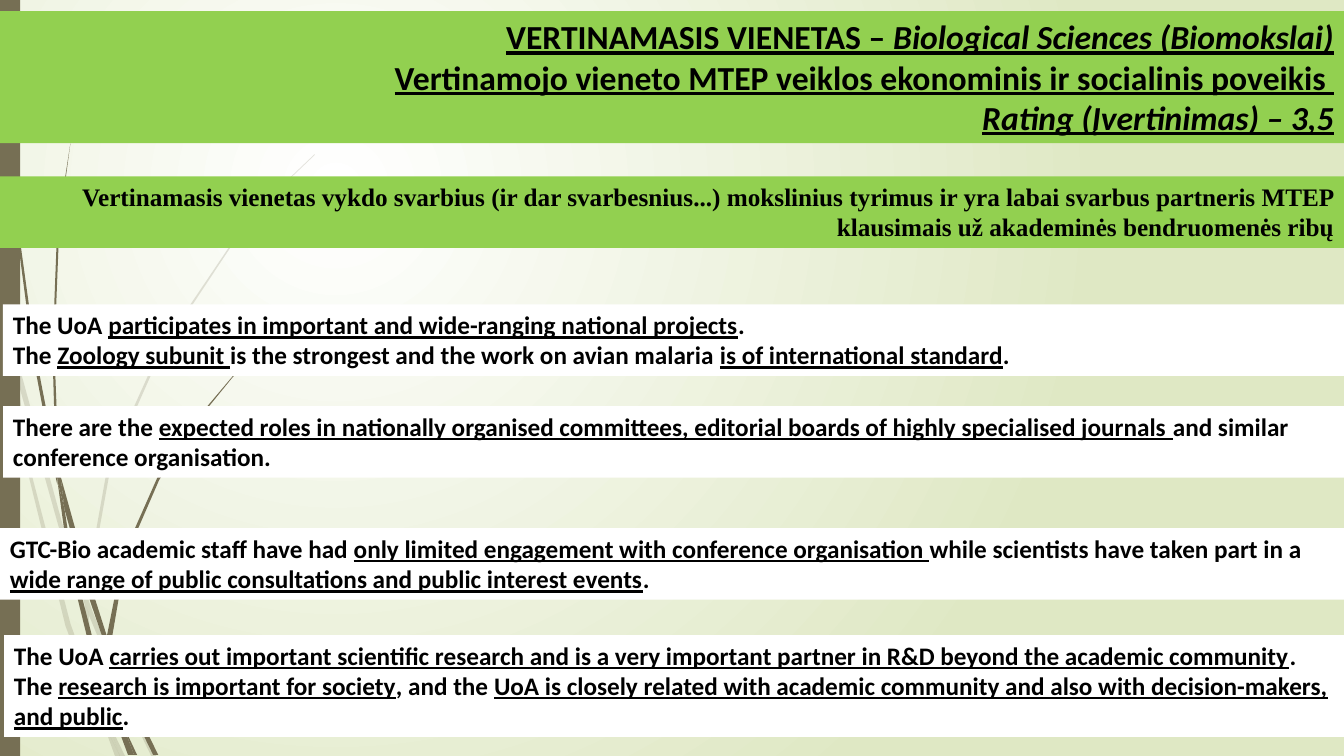
from pptx import Presentation
from pptx.dml.color import RGBColor
from pptx.enum.shapes import MSO_SHAPE
from pptx.enum.text import MSO_ANCHOR, MSO_AUTO_SIZE, PP_ALIGN
from pptx.oxml import parse_xml
from pptx.oxml.ns import nsdecls, qn
from pptx.util import Inches, Pt

GREEN, WHITE, BLACK, BROWN = "92D050", "FFFFFF", "000000", "766F54"
PALE_EDGE = "DFE8C4"
SLIDE_WIDTH, SLIDE_HEIGHT = 13.33, 7.5

# Grass blade outlines, in hundredths of an inch
PALE_BLADES = [
    [(58, 522), (84, 599), (85, 586), (62, 520), (14, 345), (17, 376)],
    [(92, 607), (88, 596), (88, 610), (123, 694), (150, 750), (155, 750), (127, 692)],
    [(119, 750), (124, 750), (105, 711)],
    [(93, 683), (70, 619), (31, 469), (17, 376), (11, 350), (28, 470),
     (65, 621), (92, 693), (101, 714), (99, 707)],
    [(84, 599), (87, 646), (93, 683), (96, 692), (105, 711), (103, 706),
     (91, 646), (88, 610), (88, 608)],
    [(88, 584), (110, 462), (160, 349), (229, 245), (268, 198), (290, 175),
     (312, 154), (312, 153), (289, 175), (268, 197), (228, 244), (158, 348),
     (107, 461), (85, 584), (85, 586), (88, 596)],
    [(101, 714), (114, 750), (119, 750)],
    [(88, 608), (88, 610), (88, 596), (85, 586), (84, 599)],
    [(96, 692), (93, 683), (99, 707), (101, 714), (119, 750), (105, 711)],
]
DARK_BLADES = [
    [(7, 110), (17, 233), (33, 355), (56, 477), (57, 481), (55, 457), (55, 453),
     (36, 355), (19, 232), (8, 109), (5, 48), (4, 0), (3, 0), (4, 48)],
    [(88, 592), (106, 645), (106, 633), (106, 631), (93, 590), (60, 472), (64, 505)],
    [(113, 649), (110, 641), (111, 656), (132, 708), (152, 749), (157, 749), (136, 706)],
    [(110, 691), (98, 657), (72, 556), (64, 505), (57, 477), (68, 557),
     (93, 659), (111, 708), (117, 722), (116, 717)],
    [(60, 472), (58, 453), (54, 349), (58, 245), (63, 193), (70, 141),
     (62, 193), (56, 245), (52, 349), (55, 449)],
    [(133, 749), (136, 749), (122, 719)],
    [(57, 477), (64, 505), (60, 472), (55, 449), (55, 453)],
    [(111, 633), (125, 552), (158, 476), (205, 406), (231, 374), (245, 359),
     (261, 344), (260, 344), (245, 358), (231, 373), (204, 405), (156, 474),
     (122, 551), (106, 631), (110, 641)],
    [(117, 722), (127, 749), (131, 749)],
    [(106, 645), (109, 651), (111, 656), (110, 641), (106, 631)],
    [(116, 706), (110, 691), (116, 717), (117, 722), (130, 749), (133, 749), (122, 719)],
]

# In each paragraph, every second part between bars is emphasised
HEADING = [
    "VERTINAMASIS VIENETAS – |Biological Sciences (Biomokslai)",
    "Vertinamojo vieneto MTEP veiklos ekonominis ir socialinis poveikis ",
    "|Rating (Įvertinimas) – 3,5",
]
SUMMARY = [
    "Vertinamasis vienetas vykdo svarbius (ir dar svarbesnius...) mokslinius tyrimus "
    "ir yra labai svarbus partneris MTEP klausimais už akademinės bendruomenės ribų",
]
# Left, top, width, height and paragraphs of each finding
FINDINGS = [
    (0.03, 3.02, 13.33, 0.71, [
        "The UoA |participates in important and wide-ranging national projects|.",
        "The |Zoology subunit |is the strongest and the work on avian malaria "
        "|is of international standard|.",
    ]),
    (0.03, 4.03, 13.31, 0.71, [
        "There are the |expected roles in nationally organised committees, editorial "
        "boards of highly specialised journals |and similar conference organisation.",
    ]),
    (0, 5.24, 13.33, 0.71, [
        "GTC-Bio academic staff have had |only limited engagement with conference "
        "organisation |while scientists have taken part in a "
        "|wide range of public consultations and public interest events|.",
    ]),
    (0.04, 6.3, 13.31, 1.01, [
        "The UoA |carries out important scientific research and is a very important "
        "partner in R&D beyond the academic community|. The |research is important "
        "for society|, and the |UoA is closely related with academic community and "
        "also with decision-makers, and public|.",
    ]),
]

HEADING_FONT = {"name": "Calibri", "size": Pt(24), "bold": True, "underline": True}
SUMMARY_FONT = {"name": "Times New Roman", "size": Pt(18), "bold": True}
FINDING_FONT = {"name": "Calibri", "size": Pt(18), "bold": True}


def set_attributes(target, values):
    for name, value in values.items():
        setattr(target, name, value)


def paint(fill, color):
    fill.solid()
    fill.fore_color.rgb = RGBColor.from_string(color)


def add_background(slide):
    slide.element.cSld.insert(0, parse_xml(
        f'<p:bg {nsdecls("p", "a")}><p:bgPr><a:gradFill rotWithShape="1"><a:gsLst>'
        f'<a:gs pos="0"><a:srgbClr val="{WHITE}"/></a:gs>'
        f'<a:gs pos="100000"><a:srgbClr val="{PALE_EDGE}"/></a:gs></a:gsLst>'
        '<a:path path="circle"><a:fillToRect l="50000" t="50000" r="100000" b="100000"/>'
        '</a:path></a:gradFill><a:effectLst/></p:bgPr></p:bg>'))


def finish(shape, color):
    paint(shape.fill, color)
    shape.line.fill.background()
    shape.shadow.inherit = False


def add_blade(slide, outline, opacity=100):
    builder = slide.shapes.build_freeform(*outline[0], scale=Inches(0.01))
    builder.add_line_segments(outline[1:], close=True)
    blade = builder.convert_to_shape()
    finish(blade, BROWN)
    if opacity < 100:
        tint = next(blade.element.spPr.iter(qn("a:srgbClr")))
        tint.append(parse_xml(f'<a:alpha {nsdecls("a")} val="{opacity * 1000}"/>'))


def add_bar(slide, left, top, width, height, color):
    bar = slide.shapes.add_shape(MSO_SHAPE.RECTANGLE, *map(Inches, (left, top, width, height)))
    finish(bar, color)
    return bar


def write(shape, paragraphs, font, emphasis, alignment):
    frame = shape.text_frame
    set_attributes(frame, {"word_wrap": True, "auto_size": MSO_AUTO_SIZE.NONE,
                           "vertical_anchor": MSO_ANCHOR.TOP})
    for index, text in enumerate(paragraphs):
        paragraph = frame.add_paragraph() if index else frame.paragraphs[0]
        paragraph.alignment = alignment
        for position, part in enumerate(text.split("|")):
            if part:
                run = paragraph.add_run()
                run.text = part
                set_attributes(run.font, font | (emphasis if position % 2 else {}))
                run.font.color.rgb = RGBColor.from_string(BLACK)


def add_heading(slide):
    heading = slide.shapes.title
    set_attributes(heading, {"left": 0, "top": Inches(0.11),
                             "width": Inches(SLIDE_WIDTH), "height": Inches(1.31)})
    paint(heading.fill, GREEN)
    write(heading, HEADING, HEADING_FONT, {"italic": True}, PP_ALIGN.RIGHT)
    # Bring the heading in front of the grass
    slide.shapes.element.append(heading.element)


def main():
    deck = Presentation()
    set_attributes(deck, {"slide_width": Inches(SLIDE_WIDTH),
                          "slide_height": Inches(SLIDE_HEIGHT)})
    slide = deck.slides.add_slide(deck.slide_layouts.get_by_name("Title Only"))

    # Backdrop
    add_background(slide)
    for outline in PALE_BLADES:
        add_blade(slide, outline, opacity=20)
    for outline in DARK_BLADES:
        add_blade(slide, outline)
    add_bar(slide, 0, 0, 0.2, SLIDE_HEIGHT, BROWN)

    # Heading, summary and findings
    add_heading(slide)
    summary = add_bar(slide, 0, 1.75, SLIDE_WIDTH, 0.71, GREEN)
    write(summary, SUMMARY, SUMMARY_FONT, {}, PP_ALIGN.RIGHT)
    for *place, paragraphs in FINDINGS:
        finding = add_bar(slide, *place, WHITE)
        write(finding, paragraphs, FINDING_FONT, {"underline": True}, PP_ALIGN.LEFT)

    deck.save("out.pptx")


if __name__ == "__main__":
    main()
